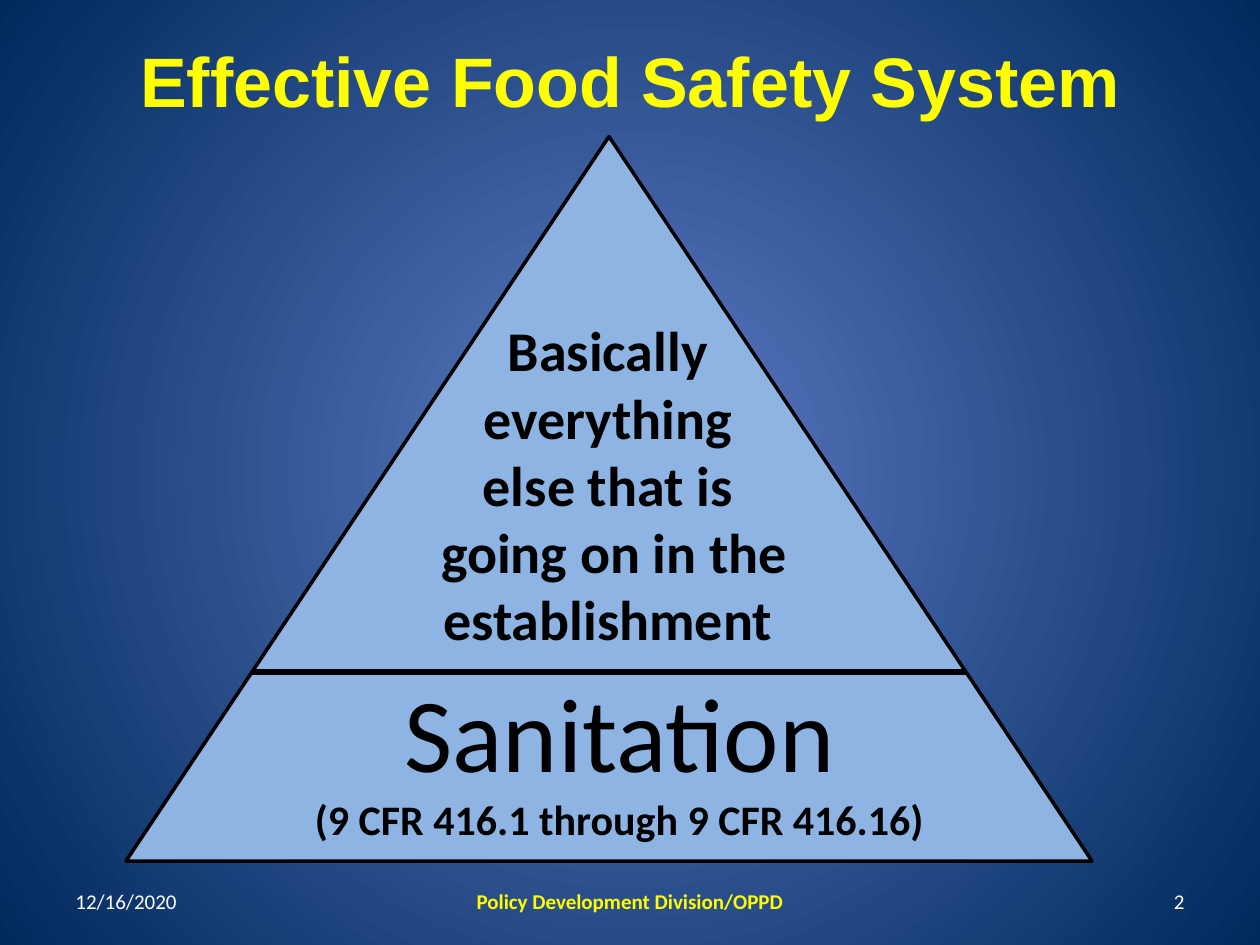
from lxml.etree import SubElement
from pptx import Presentation
from pptx.dml.color import RGBColor
from pptx.enum.shapes import MSO_CONNECTOR as Connector, MSO_SHAPE as Shape
from pptx.enum.text import MSO_ANCHOR as Anchor, PP_ALIGN as Align
from pptx.oxml.ns import qn
from pptx.util import Inches, Pt

COLORS = {
    "center": "5E7CC5",
    "edge": "00295C",
    "pyramid": "8EB4E3",
    "accent": "FFFF00",
    "light": "FFFFFF",
    "dark": "000000",
}
COLUMNS, ROWS = 120, 90


def color(name):
    return RGBColor.from_string(COLORS[name])


def write(paragraph, text, size=12, font="Calibri", ink="dark", bold=False,
          align=Align.CENTER):
    paragraph.alignment = align
    run = paragraph.add_run()
    run.text = text
    run.font.size = Pt(size)
    run.font.name = font
    run.font.bold = bold
    run.font.color.rgb = color(ink)


class SlideBuilder:
    """Places elements on a grid of COLUMNS by ROWS."""

    def __init__(self, presentation):
        self.column = presentation.slide_width / COLUMNS
        self.row = presentation.slide_height / ROWS
        self.slide = presentation.slides.add_slide(presentation.slide_layouts[6])

    def place(self, *lengths):
        """Turn alternating columns and rows into slide lengths."""
        units = (self.column, self.row) * 2
        return [round(length * unit) for length, unit in zip(lengths, units)]

    def radial_background(self, *stop_colors):
        fill = self.slide.background.fill
        fill.gradient()
        for stop, name in zip(fill.gradient_stops, stop_colors):
            stop.color.rgb = color(name)
        linear = next(self.slide.element.iter(qn("a:lin")))
        gradient = linear.getparent()
        gradient.remove(linear)
        circle = SubElement(gradient, qn("a:path"), {"path": "circle"})
        SubElement(circle, qn("a:fillToRect"),
                   dict.fromkeys("ltrb", "50000"))

    def triangle(self, box, fill, line_width):
        shape = self.slide.shapes.add_shape(
            Shape.ISOSCELES_TRIANGLE, *self.place(*box))
        shape.shadow.inherit = False
        shape.fill.solid()
        shape.fill.fore_color.rgb = color(fill)
        shape.line.color.rgb = color("dark")
        shape.line.width = Pt(line_width)

    def line(self, ends, width):
        connector = self.slide.shapes.add_connector(
            Connector.STRAIGHT, *self.place(*ends))
        connector.line.color.rgb = color("dark")
        connector.line.width = Pt(width)
        SubElement(connector.element.spPr, qn("a:effectLst"))

    def text(self, box, *lines, anchor=Anchor.TOP):
        """Add a text box; each line is a pair of text and its format."""
        frame = self.slide.shapes.add_textbox(*self.place(*box)).text_frame
        frame.word_wrap = True
        frame.vertical_anchor = anchor
        for index, (content, style) in enumerate(lines):
            paragraph = frame.add_paragraph() if index else frame.paragraphs[0]
            write(paragraph, content, **style)

    def footer(self, left, width, content, **style):
        self.text((left, 83.4, width, 4.8), (content, style),
                  anchor=Anchor.MIDDLE)


def main():
    presentation = Presentation()
    presentation.slide_width, presentation.slide_height = Inches(10), Inches(7.5)
    builder = SlideBuilder(presentation)
    builder.radial_background("center", "edge")

    builder.triangle((12, 13, 92, 69), fill="pyramid", line_width=2)
    builder.line((24, 64, 92, 64), width=3)
    builder.text((17, 63, 84, 18.1),
                 ("Sanitation", {"size": 60}),
                 ("(9 CFR 416.1 through 9 CFR 416.16)",
                  {"size": 24, "bold": True}))
    upper_lines = ("Basically ", "everything ", "else that is ",
                   "going on in the establishment ")
    builder.text((33, 29.5, 51, 33.5),
                 *[(line, {"size": 32, "bold": True}) for line in upper_lines])
    builder.text((8, 3, 104, 9.2),
                 ("Effective Food Safety System",
                  {"size": 40, "font": "Arial", "ink": "accent", "bold": True}))

    builder.footer(6, 28, "12/16/2020", ink="light", align=Align.LEFT)
    builder.footer(41, 38, "Policy Development Division/OPPD",
                   ink="accent", bold=True)
    builder.footer(86, 28, "2", ink="light", align=Align.RIGHT)
    presentation.save("out.pptx")


if __name__ == "__main__":
    main()
